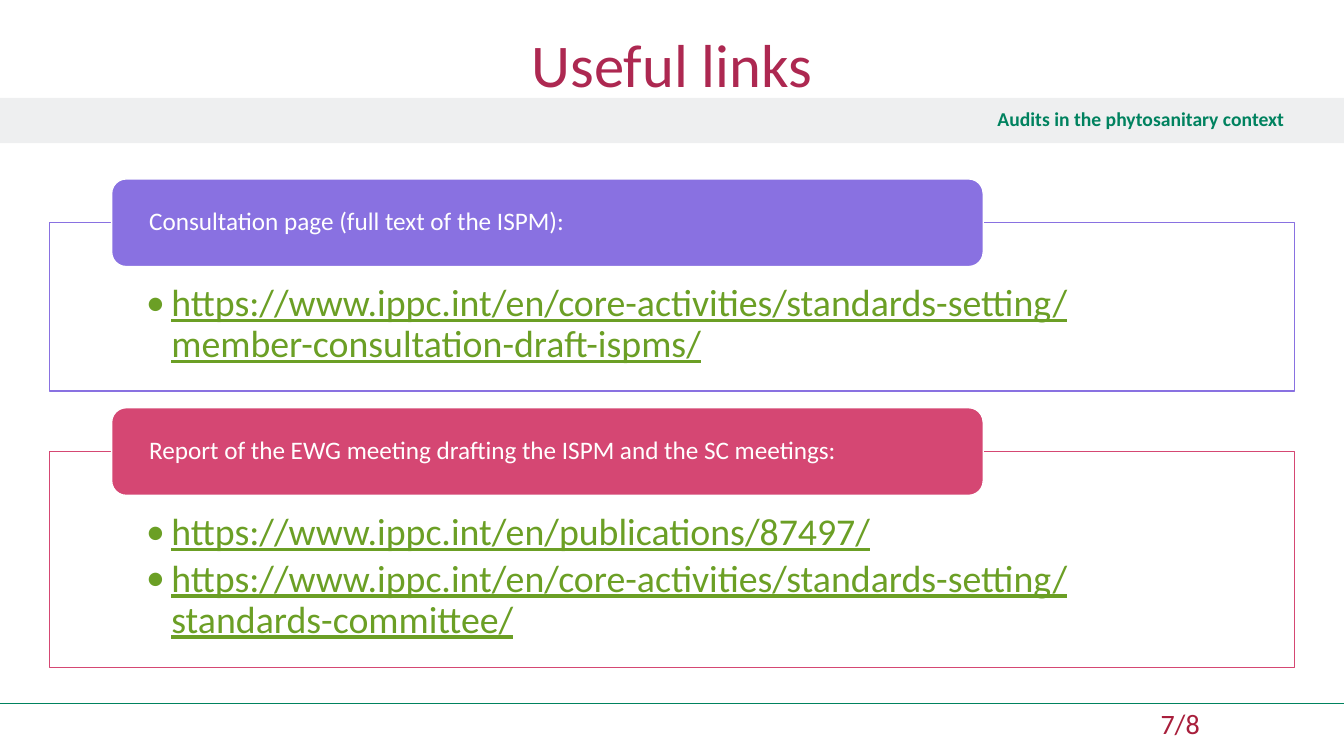
from lxml import etree
from pptx import Presentation
from pptx.dml.color import RGBColor
from pptx.enum.shapes import MSO_CONNECTOR, MSO_SHAPE
from pptx.enum.text import MSO_ANCHOR, PP_ALIGN
from pptx.oxml.ns import qn
from pptx.util import Inches, Pt

RECTANGLE, ROUNDED = MSO_SHAPE.RECTANGLE, MSO_SHAPE.ROUNDED_RECTANGLE
TOP, MIDDLE = MSO_ANCHOR.TOP, MSO_ANCHOR.MIDDLE
LEFT, CENTER, RIGHT = PP_ALIGN.LEFT, PP_ALIGN.CENTER, PP_ALIGN.RIGHT

WHITE = RGBColor(0xFF, 0xFF, 0xFF)
BAND_GREY = RGBColor(0xD8, 0xD9, 0xDC)
GREEN = RGBColor(0x00, 0x82, 0x5F)
CRIMSON = RGBColor(0xA8, 0x1E, 0x3B)
TITLE_RED = RGBColor(0xAD, 0x28, 0x51)
LINK_GREEN = RGBColor(0x6B, 0x9F, 0x25)
PURPLE = RGBColor(0x89, 0x71, 0xE1)
PINK = RGBColor(0xD5, 0x47, 0x73)

TITLE = "Useful links"
SUBTITLE = "Audits in the phytosanitary context"
PAGE = "7/8"
# heading, colour, panel height, links
SECTIONS = [
    ("Consultation page (full text of the ISPM):", PURPLE, 1.67, [
        "https://www.ippc.int/en/core-activities/standards-setting/member-consultation-draft-ispms/",
    ]),
    ("Report of the EWG meeting drafting the ISPM and the SC meetings:", PINK, 2.14, [
        "https://www.ippc.int/en/publications/87497/",
        "https://www.ippc.int/en/core-activities/standards-setting/standards-committee/",
    ]),
]

FONT = "Calibri"
WIDTH, HEIGHT = 13.33, 7.5
PANEL_LEFT, FIRST_PANEL_TOP, PANEL_GAP = 0.49, 2.21, 0.6
PANEL_WIDTH = WIDTH - 2 * PANEL_LEFT
TAB_HEIGHT = 0.87
TAB_LEFT = PANEL_LEFT + 0.05 * PANEL_WIDTH
TAB_WIDTH = 0.7 * PANEL_WIDTH
FOOTER_LINE_TOP = 6.98


def add_bullet(paragraph, indent=0.25):
    properties = paragraph._p.get_or_add_pPr()
    properties.set("marL", str(Inches(indent)))
    properties.set("indent", str(-Inches(indent)))
    etree.SubElement(properties, qn("a:buFont")).set("typeface", FONT)
    etree.SubElement(properties, qn("a:buChar")).set("char", "•")


def write_text(shape, lines, size, color, align=LEFT, anchor=MIDDLE, insets=(0.1, 0.05, 0.1, 0.05),
               bold=False, underline=False, bullet=False, line_spacing=1.0, space_after=0):
    frame = shape.text_frame
    frame.word_wrap = True
    frame.vertical_anchor = anchor
    (frame.margin_left, frame.margin_top,
     frame.margin_right, frame.margin_bottom) = map(Inches, insets)
    for index, line in enumerate(lines):
        paragraph = frame.add_paragraph() if index else frame.paragraphs[0]
        paragraph.alignment = align
        paragraph.line_spacing = line_spacing
        paragraph.space_after = Pt(space_after)
        if bullet:
            add_bullet(paragraph)
        run = paragraph.add_run()
        run.text = line
        for font in (paragraph.font, run.font):
            font.name, font.size, font.bold = FONT, Pt(size), bold
            font.color.rgb = color
        run.font.underline = underline


def add_box(slide, kind, left, top, width, height, fill, line=None):
    shape = slide.shapes.add_shape(kind, *map(Inches, (left, top, width, height)))
    shape.shadow.inherit = False
    shape.fill.solid()
    shape.fill.fore_color.rgb = fill
    if line is None:
        shape.line.fill.background()
    else:
        shape.line.color.rgb = line
        shape.line.width = Pt(1)
    return shape


def add_text_box(slide, left, top, width, height, text, **text_format):
    box = slide.shapes.add_textbox(*map(Inches, (left, top, width, height)))
    write_text(box, [text], **text_format)


def add_frame(slide):
    """Draw the footer line, subtitle band and page number."""
    line = slide.shapes.add_connector(
        MSO_CONNECTOR.STRAIGHT, 0, Inches(FOOTER_LINE_TOP), Inches(WIDTH), Inches(FOOTER_LINE_TOP))
    line.line.color.rgb = GREEN
    line.line.width = Pt(1)
    etree.SubElement(line._element.spPr, qn("a:effectLst"))

    band = add_box(slide, RECTANGLE, 0, 0.97, WIDTH, 0.45, BAND_GREY)
    band_color = band._element.spPr.find(qn("a:solidFill"))[0]
    etree.SubElement(band_color, qn("a:alpha")).set("val", "42000")
    write_text(band, [SUBTITLE], size=14, color=GREEN, align=RIGHT, bold=True,
               insets=(0.59, 0.05, 0.59, 0.05), line_spacing=0.9)

    add_text_box(slide, 10.92, 7.01, WIDTH - 10.92, 0.39, PAGE, size=20, color=CRIMSON,
                 anchor=TOP, insets=(0.59, 0, 0.39, 0.05))


def add_sections(slide):
    top = FIRST_PANEL_TOP
    for heading, color, height, links in SECTIONS:
        panel = add_box(slide, RECTANGLE, PANEL_LEFT, top, PANEL_WIDTH, height, WHITE, color)
        write_text(panel, links, size=27, color=LINK_GREEN, anchor=TOP, underline=True,
                   bullet=True, insets=(0.96, 0.61, 0.96, 0.21), line_spacing=0.9, space_after=4)
        tab = add_box(slide, ROUNDED, TAB_LEFT, top - TAB_HEIGHT / 2, TAB_WIDTH, TAB_HEIGHT,
                      color, WHITE)
        write_text(tab, [heading], size=18, color=WHITE, insets=(0.33, 0, 0.33, 0),
                   line_spacing=0.9)
        top += height + PANEL_GAP


def main():
    presentation = Presentation()
    presentation.slide_width, presentation.slide_height = Inches(WIDTH), Inches(HEIGHT)
    slide = presentation.slides.add_slide(presentation.slide_layouts[6])
    add_frame(slide)
    add_sections(slide)
    add_text_box(slide, 0, 0, WIDTH, HEIGHT / 6, TITLE, size=43.3, color=TITLE_RED, align=CENTER)
    presentation.save("out.pptx")


if __name__ == "__main__":
    main()
